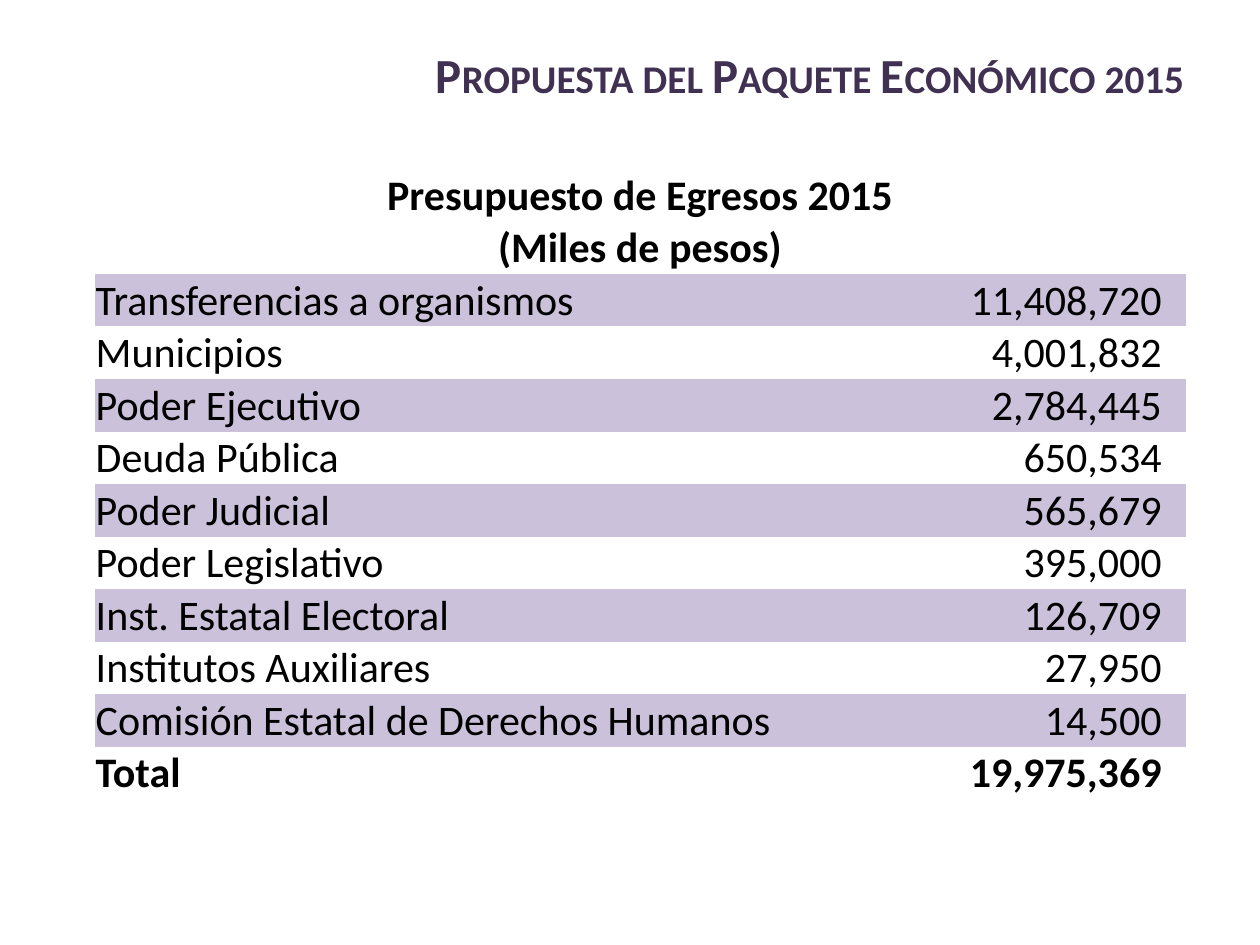
"""Build the 2015 expenditure budget slide."""
import pptx
import pptx.dml.color
import pptx.enum.text
import pptx.util

Inches = pptx.util.Inches
Pt = pptx.util.Pt
ALIGN = pptx.enum.text.PP_ALIGN
ANCHOR = pptx.enum.text.MSO_ANCHOR
PURPLE = pptx.dml.color.RGBColor(0x40, 0x31, 0x52)
LILAC = pptx.dml.color.RGBColor(0xCC, 0xC1, 0xDA)
BLACK = pptx.dml.color.RGBColor(0, 0, 0)
NO_STYLE_NO_GRID = "{2D5ABB26-0587-4C30-8999-92F81FD0307C}"

HEADINGS = ["Presupuesto de Egresos 2015", "(Miles de pesos)"]
EXPENSES = [
    ("Transferencias a organismos", "11,408,720"),
    ("Municipios", "4,001,832"),
    ("Poder Ejecutivo", "2,784,445"),
    ("Deuda Pública", "650,534"),
    ("Poder Judicial", "565,679"),
    ("Poder Legislativo", "395,000"),
    ("Inst. Estatal Electoral", "126,709"),
    ("Institutos Auxiliares", "27,950"),
    ("Comisión Estatal de Derechos Humanos", "14,500"),
    ("Total", "19,975,369"),
]


def add_text(paragraph, text, size, color, bold, alignment):
    paragraph.alignment = alignment
    run = paragraph.add_run()
    run.text = text
    run.font.name = "Calibri"
    run.font.size = Pt(size)
    run.font.bold = bold
    run.font.color.rgb = color
    return run


def fill_cell(cell, text, bold, alignment, right=0.01):
    cell.margin_left = cell.margin_top = Inches(0.01)
    cell.margin_right = Inches(right)
    cell.margin_bottom = 0
    cell.vertical_anchor = ANCHOR.BOTTOM
    add_text(cell.text_frame.paragraphs[0], text, 24, BLACK, bold, alignment)


deck = pptx.Presentation()
deck.slide_width, deck.slide_height = Inches(10), Inches(7.5)
slide = deck.slides.add_slide(deck.slide_layouts[5])

title = slide.shapes.title
title.left, title.top = Inches(1.24), Inches(0.3)
title.width, title.height = Inches(8.26), Inches(1.25)
title.text_frame.auto_size = pptx.enum.text.MSO_AUTO_SIZE.NONE
title.text_frame.vertical_anchor = ANCHOR.TOP
heading = add_text(title.text_frame.paragraphs[0], "Propuesta del Paquete Económico 2015",
                   28, PURPLE, True, ALIGN.RIGHT)
heading._r.get_or_add_rPr().set("cap", "small")

row_count = len(HEADINGS) + len(EXPENSES)
budget = slide.shapes.add_table(row_count, 2, Inches(0.75), Inches(1.34),
                                Inches(8.66), Inches(4.92)).table
budget.first_row = budget.horz_banding = False
budget._tbl.tblPr.find(pptx.oxml.ns.qn("a:tableStyleId")).text = NO_STYLE_NO_GRID
budget.columns[0].width, budget.columns[1].width = Inches(6.11), Inches(2.55)
for row in budget.rows:
    row.height = Inches(0.41)

for index, text in enumerate(HEADINGS):
    budget.cell(index, 0).merge(budget.cell(index, 1))
    fill_cell(budget.cell(index, 0), text, True, ALIGN.CENTER)

for index, (concept, amount) in enumerate(EXPENSES):
    concept_cell, amount_cell = budget.rows[index + len(HEADINGS)].cells
    is_total = concept == "Total"
    fill_cell(concept_cell, concept, is_total, ALIGN.LEFT)
    fill_cell(amount_cell, amount, is_total, ALIGN.RIGHT, 0.19)
    for cell in (concept_cell, amount_cell):
        if index % 2 == 0:
            cell.fill.solid()
            cell.fill.fore_color.rgb = LILAC
        else:
            cell.fill.background()

deck.save("out.pptx")
